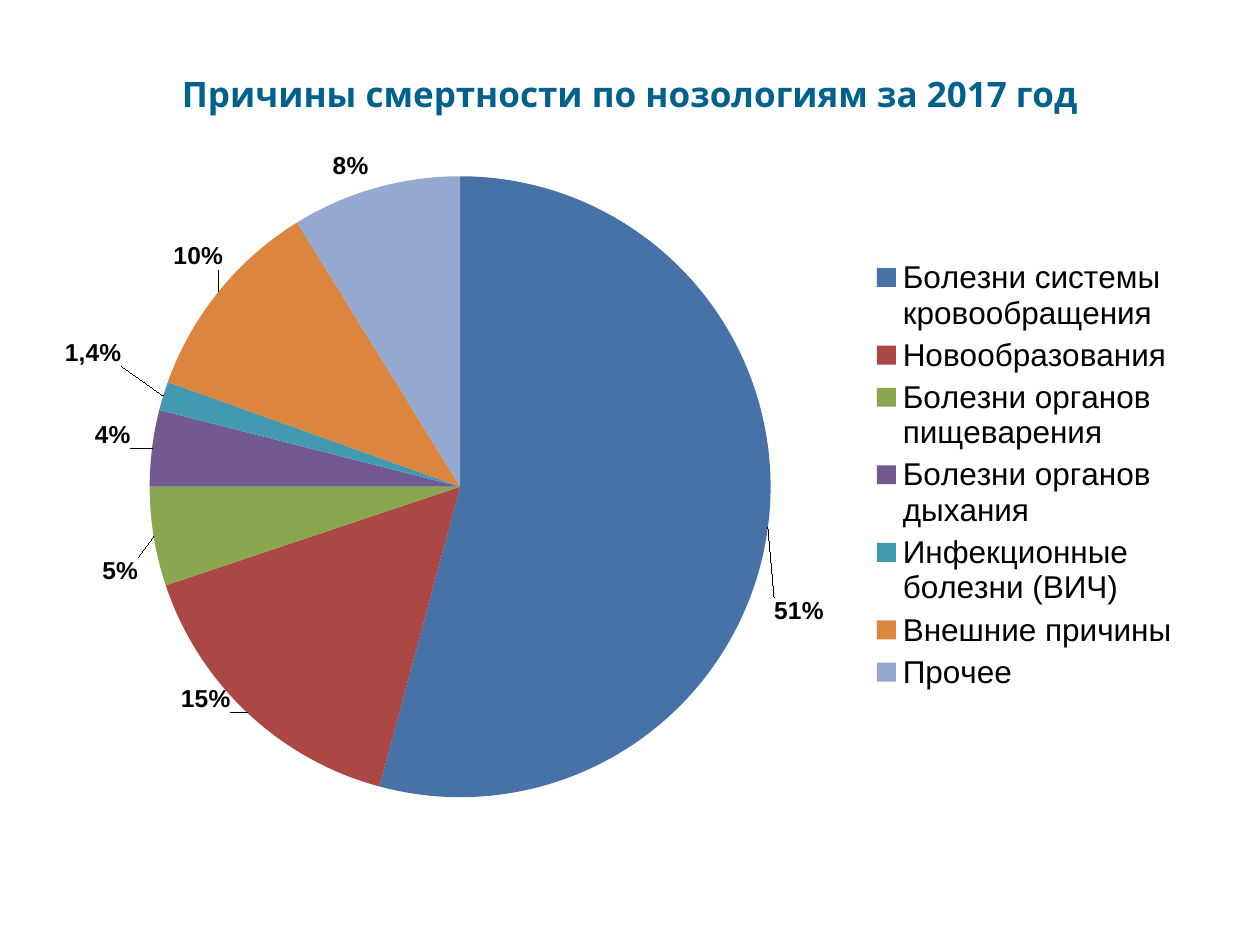
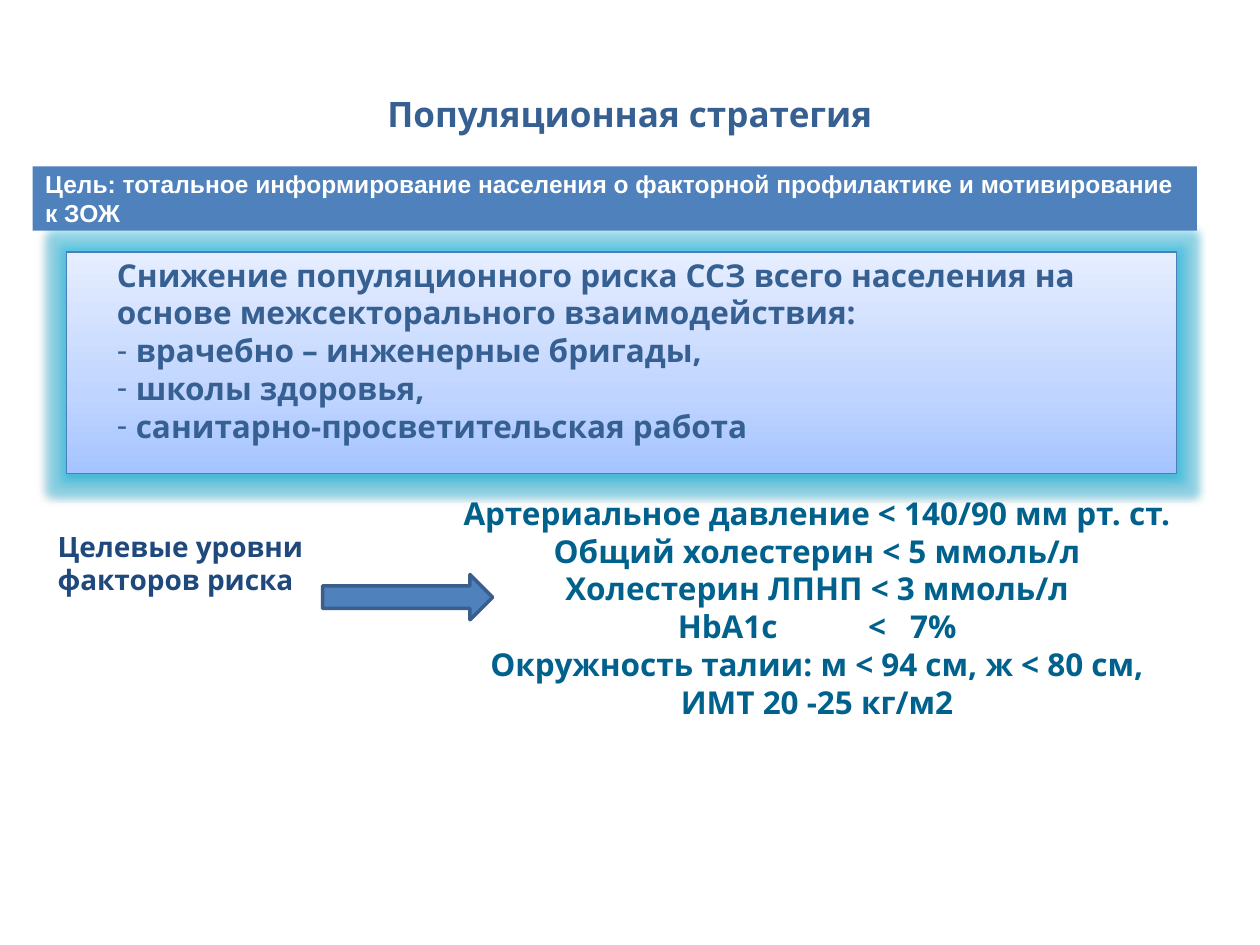
import dataclasses
import typing

import lxml.etree
import pptx
import pptx.chart.data
import pptx.dml.color
import pptx.enum.chart
import pptx.enum.shapes
import pptx.enum.text
import pptx.oxml
import pptx.oxml.ns
import pptx.util

EMU_PER_PX = 9144  # 100 px to the inch
Align = pptx.enum.text.PP_ALIGN
Anchor = pptx.enum.text.MSO_ANCHOR
Preset = pptx.enum.shapes.MSO_SHAPE


@dataclasses.dataclass(frozen=True)
class Theme:
    heading_font: str = "Open Sans"
    body_font: str = "Arial"
    teal: str = "00618D"
    blue: str = "376092"
    navy: str = "1F497D"
    accent: str = "4F81BD"
    arrow_line: str = "3A5F8C"
    panel_line: str = "4B7EBC"
    glow: str = "4BACC6"
    white: str = "FFFFFF"
    black: str = "000000"
    title_size: int = 20
    body_size: int = 18
    caption_size: int = 16
    label_size: int = 14


THEME = Theme()


class Box(typing.NamedTuple):
    left: int
    top: int
    width: int
    height: int

    def emu(self) -> list[int]:
        return [px(value) for value in self]


class Line(typing.NamedTuple):
    """One paragraph; each run is a text and its letter spacing in points."""
    runs: tuple[tuple[str, float], ...]
    bullet: bool = False


@dataclasses.dataclass(frozen=True)
class TextBlock:
    box: Box
    lines: tuple[Line, ...]
    size: int
    color: str
    font: str = THEME.heading_font
    align: Align = Align.LEFT
    anchor: Anchor = Anchor.TOP
    margins: tuple[int, int] = (10, 5)
    line_spacing: float = 1.0
    fill: str | None = None


class Cause(typing.NamedTuple):
    name: str
    share: float
    label: str
    color: str
    label_shift: tuple[int, int]


# Helpers
def px(value: int) -> int:
    return value * EMU_PER_PX


def rgb(value: str) -> pptx.dml.color.RGBColor:
    return pptx.dml.color.RGBColor.from_string(value)


def plain(text: str, bullet: bool = False) -> Line:
    return Line(((text, 0),), bullet)


def apply_format(target: typing.Any, values: dict[str, typing.Any]) -> None:
    for name, value in values.items():
        setattr(target, name, value)


def format_font(font: typing.Any, size: int, color: str, name: str, bold: bool = True) -> None:
    apply_format(font, {"size": pptx.util.Pt(size), "name": name, "bold": bold})
    font.color.rgb = rgb(color)


def add_dash(paragraph: typing.Any) -> None:
    properties = paragraph._p.get_or_add_pPr()
    for name, value in {"marL": px(15), "indent": -px(15)}.items():
        properties.set(name, str(value))
    for tag, attribute, value in (("buFont", "typeface", THEME.body_font), ("buChar", "char", "-")):
        element = lxml.etree.SubElement(properties, pptx.oxml.ns.qn(f"a:{tag}"))
        element.set(attribute, value)


def add_text(slide: typing.Any, block: TextBlock) -> None:
    if block.fill:
        shape = add_preset(slide, Preset.RECTANGLE, block.box)
        shape.fill.solid()
        shape.fill.fore_color.rgb = rgb(block.fill)
        shape.line.fill.background()
    else:
        shape = slide.shapes.add_textbox(*block.box.emu())
    frame = shape.text_frame
    side, vertical = map(px, block.margins)
    apply_format(frame, {
        "word_wrap": True, "vertical_anchor": block.anchor,
        "margin_left": side, "margin_right": side,
        "margin_top": vertical, "margin_bottom": vertical,
    })
    for index, line in enumerate(block.lines):
        paragraph = frame.add_paragraph() if index else frame.paragraphs[0]
        apply_format(paragraph, {"alignment": block.align, "line_spacing": block.line_spacing})
        if line.bullet:
            add_dash(paragraph)
        for text, spacing in line.runs:
            run = paragraph.add_run()
            run.text = text
            format_font(run.font, block.size, block.color, block.font)
            if spacing:
                run._r.get_or_add_rPr().set("spc", str(round(spacing * 100)))


def add_title(slide: typing.Any, text: str, color: str, height: int) -> None:
    add_text(slide, TextBlock(
        Box(50, 24, 900, height), (plain(text),), THEME.title_size, color,
        align=Align.CENTER, anchor=Anchor.MIDDLE, margins=(0, 0), line_spacing=0.9))


def add_preset(slide: typing.Any, preset: Preset, box: Box) -> typing.Any:
    shape = slide.shapes.add_shape(preset, *box.emu())
    shape.shadow.inherit = False
    return shape


def add_outline(shape: typing.Any, color: str, width: float) -> None:
    shape.line.color.rgb = rgb(color)
    shape.line.width = pptx.util.Pt(width)


def add_glowing_panel(slide: typing.Any, box: Box) -> None:
    panel = add_preset(slide, Preset.RECTANGLE, box)
    add_outline(panel, THEME.panel_line, 0.75)
    panel.fill.solid()
    properties = panel._element.spPr
    namespace = pptx.oxml.ns.nsdecls("a")
    stops = "".join(
        f'<a:gs pos="{position * 1000}"><a:srgbClr val="{color}"/></a:gs>'
        for position, color in ((0, "A4C4FF"), (35, "BFD4FF"), (100, "E6EEFF")))
    gradient = f'<a:gradFill {namespace}><a:gsLst>{stops}</a:gsLst><a:lin ang="16200000"/></a:gradFill>'
    effects = (
        f'<a:effectLst {namespace}><a:glow rad="101600"><a:srgbClr val="{THEME.glow}">'
        '<a:alpha val="40000"/><a:satMod val="175000"/></a:srgbClr></a:glow>'
        '<a:outerShdw blurRad="40000" dist="20000" dir="5400000" rotWithShape="0">'
        f'<a:srgbClr val="{THEME.black}"><a:alpha val="38000"/></a:srgbClr></a:outerShdw></a:effectLst>')
    for tag, xml in (("solidFill", gradient), ("effectLst", effects)):
        properties.replace(properties.find(pptx.oxml.ns.qn(f"a:{tag}")), pptx.oxml.parse_xml(xml))


# Chart
CHART_BOX = Box(44, 104, 910, 544)
PIE_BOX = Box(75, 36, 493, 493)
LEGEND_BOX = Box(639, 97, 260, 352)

CAUSES = (
    Cause("Болезни системы кровообращения", 0.505, "51%", "4672A8", (-1, 55)),
    Cause("Новообразования", 0.146, "15%", "AB4744", (-9, -26)),
    Cause("Болезни органов пищеварения", 0.048, "5%", "8AA64F", (-6, 15)),
    Cause("Болезни органов дыхания", 0.037, "4%", "725A90", (-11, 1)),
    Cause("Инфекционные болезни (ВИЧ)", 0.014, "1,4%", "4299B0", (-27, -22)),
    Cause("Внешние причины", 0.1, "10%", "DC853E", (8, -13)),
    Cause("Прочее", 0.082, "8%", "93A9CF", (-4, -1)),
)


def manual_layout(values: dict[str, typing.Any]) -> typing.Any:
    items = "".join(f'<c:{tag} val="{value}"/>' for tag, value in values.items())
    return pptx.oxml.parse_xml(
        f'<c:layout {pptx.oxml.ns.nsdecls("c")}><c:manualLayout>{items}</c:manualLayout></c:layout>')


def box_layout(box: Box, inner: bool = False) -> typing.Any:
    target = {"layoutTarget": "inner"} if inner else {}
    return manual_layout(target | {
        "xMode": "edge", "yMode": "edge",
        "x": round(box.left / CHART_BOX.width, 3), "y": round(box.top / CHART_BOX.height, 3),
        "w": round(box.width / CHART_BOX.width, 3), "h": round(box.height / CHART_BOX.height, 3)})


def add_causes_pie(slide: typing.Any) -> None:
    data = pptx.chart.data.CategoryChartData(number_format="0.00%")
    data.categories = [cause.name for cause in CAUSES]
    data.add_series("Series 1", [cause.share for cause in CAUSES])
    chart = slide.shapes.add_chart(
        pptx.enum.chart.XL_CHART_TYPE.PIE, *CHART_BOX.emu(), data).chart
    apply_format(chart, {"has_title": False, "has_legend": True})
    format_font(chart.font, THEME.body_size, THEME.black, THEME.body_font, bold=False)
    apply_format(chart.legend, {
        "position": pptx.enum.chart.XL_LEGEND_POSITION.RIGHT, "include_in_layout": False})
    plot = chart.plots[0]
    plot.vary_by_categories = True

    # Fixed places for the pie and the legend
    plot_area = chart._chartSpace.chart.plotArea
    for parent, layout, index in (
            (plot_area, box_layout(PIE_BOX, inner=True), 0),
            (chart.legend._element, box_layout(LEGEND_BOX), 1)):
        for previous in parent.findall(pptx.oxml.ns.qn("c:layout")):
            parent.remove(previous)
        parent.insert(index, layout)

    # Slices and their labels
    series = plot.series[0]
    outside = pptx.enum.chart.XL_LABEL_POSITION.OUTSIDE_END
    apply_format(series.data_labels, {
        "show_value": True, "number_format": "0.00%",
        "number_format_is_linked": False, "position": outside})
    format_font(series.data_labels.font, THEME.label_size, THEME.black, THEME.body_font)
    for index, cause in enumerate(CAUSES):
        point = series.points[index]
        point.format.fill.solid()
        point.format.fill.fore_color.rgb = rgb(cause.color)
        label = point.data_label
        run = label.text_frame.paragraphs[0].add_run()
        run.text = cause.label
        format_font(run.font, THEME.label_size, THEME.black, THEME.body_font)
        label.position = outside
        shift_x, shift_y = cause.label_shift
        label._dLbl.insert(1, manual_layout({
            "x": round(shift_x / CHART_BOX.width, 3),
            "y": round(shift_y / CHART_BOX.height, 3)}))


# Slides
STRATEGY_TEXTS = (
    TextBlock(
        Box(26, 132, 924, 51),
        (plain("Цель: тотальное информирование населения о факторной профилактике "
               "и мотивирование к ЗОЖ"),),
        THEME.label_size, THEME.white, font=THEME.body_font,
        anchor=Anchor.MIDDLE, fill=THEME.accent),
    TextBlock(
        Box(83, 198, 853, 218),
        (plain("Снижение популяционного риска ССЗ всего населения на основе "
               "межсекторального взаимодействия:"),
         plain("врачебно – инженерные бригады,", bullet=True),
         plain("школы здоровья,", bullet=True),
         plain("санитарно-просветительская работа", bullet=True)),
        THEME.body_size, THEME.blue),
    TextBlock(
        Box(348, 387, 601, 232),
        (plain("Артериальное давление < 140/90 мм рт. ст."),
         plain("Общий холестерин < 5 ммоль/л"),
         plain("Холестерин ЛПНП < 3 ммоль/л"),
         Line((("HbA1c", 0), (" ", 47), ("<", 0), (" ", 9), ("7%", 0))),
         plain("Окружность талии: м < 94 см, ж < 80 см,"),
         plain("ИМТ 20 -25 кг/м2")),
        THEME.body_size, THEME.teal, align=Align.CENTER),
    TextBlock(
        Box(36, 415, 310, 64), (plain("Целевые уровни факторов риска"),),
        THEME.caption_size, THEME.navy),
)


def build_causes_slide(slide: typing.Any) -> None:
    add_title(slide, "Причины смертности по нозологиям за 2017 год", THEME.teal, 104)
    add_causes_pie(slide)


def build_strategy_slide(slide: typing.Any) -> None:
    add_title(slide, "Популяционная стратегия", THEME.blue, 136)
    # The panel comes first so that its glow stays behind the goal band
    add_glowing_panel(slide, Box(53, 200, 881, 176))
    for block in STRATEGY_TEXTS:
        add_text(slide, block)
    arrow = add_preset(slide, Preset.RIGHT_ARROW, Box(256, 456, 135, 36))
    arrow.fill.solid()
    arrow.fill.fore_color.rgb = rgb(THEME.accent)
    add_outline(arrow, THEME.arrow_line, 2)


def main() -> None:
    presentation = pptx.Presentation()
    apply_format(presentation, {"slide_width": px(1000), "slide_height": px(750)})
    blank = presentation.slide_layouts[6]
    for build in (build_causes_slide, build_strategy_slide):
        build(presentation.slides.add_slide(blank))
    presentation.save("out.pptx")


if __name__ == "__main__":
    main()
